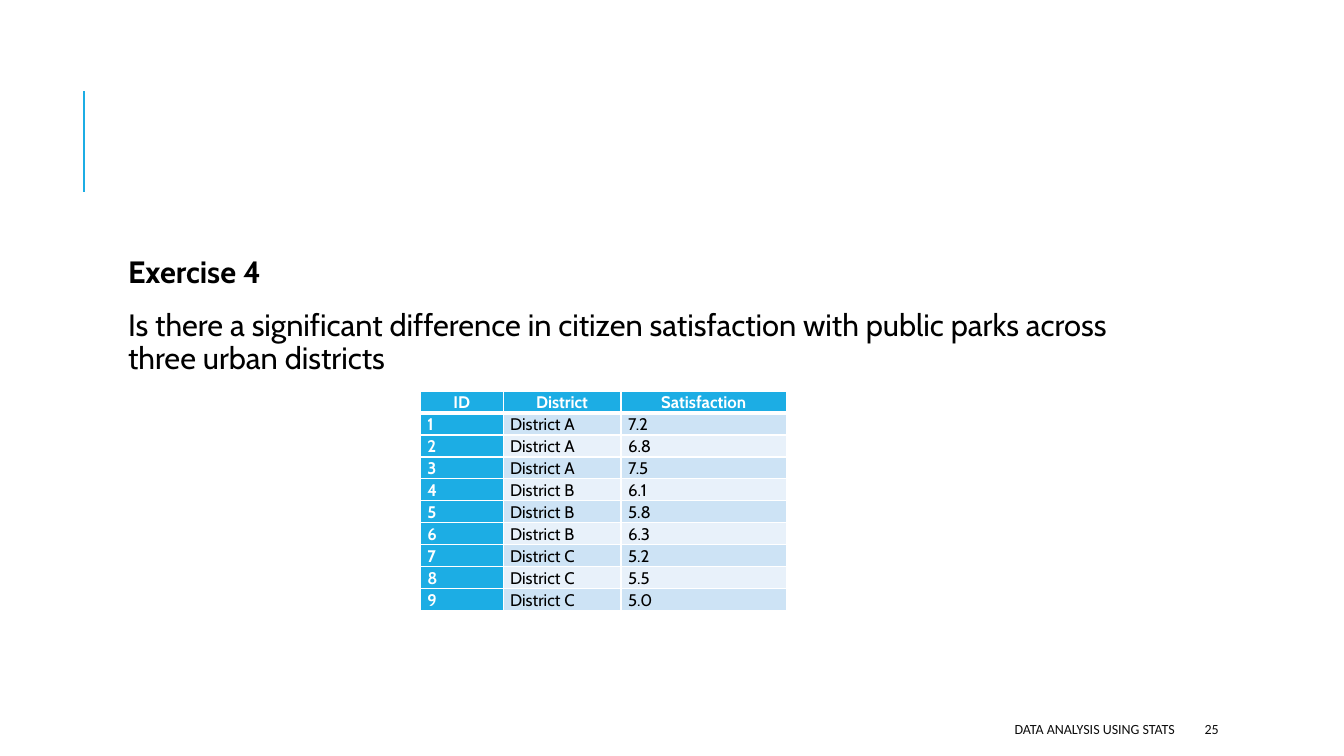
from pptx import Presentation
from pptx.dml.color import RGBColor
from pptx.enum import shapes, text
from pptx.oxml import parse_xml
from pptx.oxml.ns import nsdecls
from pptx.util import Inches, Pt

COLORS = {
    "accent": "1CADE4",
    "band_dark": "CDE3F5",
    "band_light": "E8F1FA",
    "black": "000000",
    "footer": "0D0D0D",
    "white": "FFFFFF",
}
HEADERS = ["ID", "District", "Satisfaction"]
SCORES = {
    "District A": ["7.2", "6.8", "7.5"],
    "District B": ["6.1", "5.8", "6.3"],
    "District C": ["5.2", "5.5", "5.0"],
}
QUESTION = ("Is there a significant difference in citizen satisfaction "
            "with public parks across three urban districts")


def rgb(name):
    return RGBColor.from_string(COLORS[name])


def set_font(p, name, size, color, bold=False):
    p.font.name = name
    p.font.size = Pt(size)
    p.font.bold = bold
    p.font.color.rgb = rgb(color)


def add_text_box(slide, x, y, w, h):
    sp = slide.shapes.add_textbox(Inches(x), Inches(y), Inches(w), Inches(h))
    sp.text_frame.word_wrap = True
    return sp.text_frame


def add_accent_line(slide, x, top, bottom):
    line = slide.shapes.add_connector(
        shapes.MSO_CONNECTOR.STRAIGHT,
        Inches(x), Inches(bottom), Inches(x), Inches(top))
    line.line.color.rgb = rgb("accent")
    line.line.width = Pt(1.5)
    line._element.spPr.append(parse_xml(f"<a:effectLst {nsdecls('a')}/>"))


def add_body(slide):
    tf = add_text_box(slide, 1.12, 2.5, 10.63, 4.4)
    tf.margin_left = Inches(0.15)
    tf.margin_top = tf.margin_right = tf.margin_bottom = Inches(0.05)
    for i, (words, bold) in enumerate([("Exercise 4", True), (QUESTION, False)]):
        p = tf.add_paragraph() if i else tf.paragraphs[0]
        p.text = words
        p.line_spacing = 0.9
        p.space_before = Pt(12 if i else 0)
        p.space_after = Pt(2)
        set_font(p, "Cabin", 22, "black", bold)


def add_footer(slide, x, w, words, align):
    tf = add_text_box(slide, x, 7.08, w, 0.3)
    tf.vertical_anchor = text.MSO_ANCHOR.MIDDLE
    p = tf.paragraphs[0]
    p.text = words
    p.alignment = align
    set_font(p, "Calibri", 10, "footer")


def set_borders(cell, widths):
    tc_pr = cell._tc.get_or_add_tcPr()
    for side, width in widths.items():
        tc_pr.append(parse_xml(
            f'<a:ln{side} {nsdecls("a")} w="{Pt(width)}"><a:solidFill>'
            f'<a:srgbClr val="{COLORS["white"]}"/></a:solidFill></a:ln{side}>'))


def style_cell(cell, words, row, col):
    header = row == 0
    strong = header or col == 0
    band = "band_dark" if row % 2 else "band_light"
    set_borders(cell, {"L": 1, "R": 1, "T": 3 if row == 1 else 1,
                       "B": 3 if header else 1})
    cell.fill.solid()
    cell.fill.fore_color.rgb = rgb("accent" if strong else band)
    cell.margin_left = cell.margin_right = Inches(0.07)
    cell.margin_top = cell.margin_bottom = 0
    p = cell.text_frame.paragraphs[0]
    p.text = words
    p.line_spacing = 1.07
    p.alignment = text.PP_ALIGN.CENTER if header else text.PP_ALIGN.LEFT
    set_font(p, "Cabin", 12, "white" if strong else "black", strong)


def add_score_table(slide):
    pairs = [(d, score) for d, scores in SCORES.items() for score in scores]
    rows = [HEADERS] + [[str(i), *pair] for i, pair in enumerate(pairs, 1)]
    table = slide.shapes.add_table(
        len(rows), len(HEADERS), Inches(4.17), Inches(3.88),
        Inches(3.63), Inches(2.18)).table
    table.first_col = True
    for column, width in zip(table.columns, [0.82, 1.17, 1.64]):
        column.width = Inches(width)
    for r, values in enumerate(rows):
        for c, words in enumerate(values):
            style_cell(table.cell(r, c), words, r, c)


def main():
    prs = Presentation()
    prs.slide_width, prs.slide_height = Inches(13.33), Inches(7.5)
    slide = prs.slides.add_slide(prs.slide_layouts[6])

    # Exercise text
    add_accent_line(slide, 0.83, 0.9, 1.9)
    add_body(slide)

    # Footer and page number
    add_footer(slide, 5.3, 6.45, "DATA ANALYSIS USING STATS", text.PP_ALIGN.RIGHT)
    add_footer(slide, 11.85, 1.06, "25", text.PP_ALIGN.LEFT)

    # Satisfaction scores
    add_score_table(slide)

    prs.save("out.pptx")


if __name__ == "__main__":
    main()
